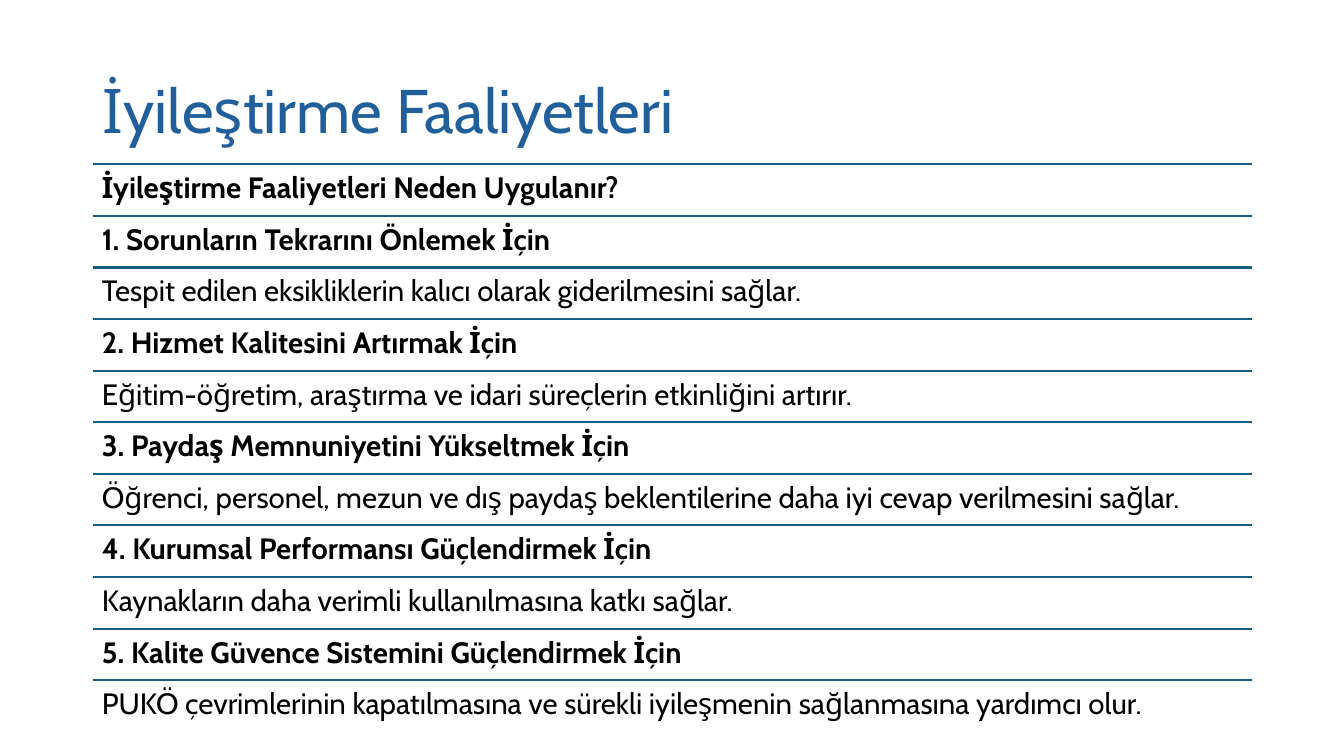
from lxml import etree
from pptx import Presentation
from pptx.dml.color import RGBColor
from pptx.enum.shapes import MSO_CONNECTOR
from pptx.enum.text import MSO_ANCHOR, MSO_AUTO_SIZE, PP_ALIGN
from pptx.oxml.ns import qn
from pptx.util import Inches, Pt

STRAIGHT = MSO_CONNECTOR.STRAIGHT
TOP, MIDDLE = MSO_ANCHOR.TOP, MSO_ANCHOR.MIDDLE
LEFT = PP_ALIGN.LEFT
NO_AUTOFIT = MSO_AUTO_SIZE.NONE

BLUE = RGBColor(0x21, 0x5F, 0x9A)
TEAL = RGBColor(0x15, 0x60, 0x82)
BLACK = RGBColor(0, 0, 0)
FONT = "Cabin"

LIST_LEFT, LIST_TOP = 0.92, 1.63
LIST_WIDTH, LIST_HEIGHT = 11.5, 5.63

HEADING = "İyileştirme Faaliyetleri Neden Uygulanır?"
REASONS = [
    ("Sorunların Tekrarını Önlemek İçin",
     "Tespit edilen eksikliklerin kalıcı olarak giderilmesini sağlar."),
    ("Hizmet Kalitesini Artırmak İçin",
     "Eğitim-öğretim, araştırma ve idari süreçlerin etkinliğini artırır."),
    ("Paydaş Memnuniyetini Yükseltmek İçin",
     "Öğrenci, personel, mezun ve dış paydaş beklentilerine daha iyi cevap "
     "verilmesini sağlar."),
    ("Kurumsal Performansı Güçlendirmek İçin",
     "Kaynakların daha verimli kullanılmasına katkı sağlar."),
    ("Kalite Güvence Sistemini Güçlendirmek İçin",
     "PUKÖ çevrimlerinin kapatılmasına ve sürekli iyileşmenin sağlanmasına "
     "yardımcı olur."),
]


def write_text(tf, text, size, color, anchor, bold=False):
    tf.word_wrap = True
    tf.auto_size = NO_AUTOFIT
    tf.vertical_anchor = anchor
    p = tf.paragraphs[0]
    p.alignment = LEFT
    p.line_spacing = 0.9
    r = p.add_run()
    r.text = text
    r.font.name = FONT
    r.font.size = Pt(size)
    r.font.bold = bold
    r.font.color.rgb = color


def set_title(s, text):
    title = s.shapes.title
    title.left, title.top = Inches(0.92), Inches(0.4)
    title.width, title.height = Inches(11.5), Inches(1.45)
    write_text(title.text_frame, text, 44, BLUE, MIDDLE)


def add_rule(shapes, top):
    right = LIST_LEFT + LIST_WIDTH
    line = shapes.add_connector(STRAIGHT, Inches(LIST_LEFT), Inches(top),
                                Inches(right), Inches(top))
    line.line.color.rgb = TEAL
    line.line.width = Pt(1.5)
    etree.SubElement(line._element.spPr, qn("a:effectLst"))


def add_row(shapes, top, height, text, bold):
    """Add one list row: a rule with its text below."""
    add_rule(shapes, top)
    box = shapes.add_textbox(Inches(LIST_LEFT), Inches(top),
                             Inches(LIST_WIDTH), Inches(height))
    tf = box.text_frame
    tf.margin_left = tf.margin_right = Inches(0.09)
    tf.margin_top = tf.margin_bottom = Inches(0.09)
    write_text(tf, text, 21, BLACK, TOP, bold)


def add_reason_list(s):
    rows = [(HEADING, True)]
    for number, (reason, effect) in enumerate(REASONS, 1):
        rows += [(f"{number}. {reason}", True), (effect, False)]
    height = LIST_HEIGHT / len(rows)
    group = s.shapes.add_group_shape()
    for i, (text, bold) in enumerate(rows):
        add_row(group.shapes, LIST_TOP + i * height, height, text, bold)


def main():
    prs = Presentation()
    prs.slide_width, prs.slide_height = Inches(13.33), Inches(7.5)
    s = prs.slides.add_slide(prs.slide_layouts[5])
    set_title(s, "İyileştirme Faaliyetleri")
    add_reason_list(s)
    prs.save("out.pptx")


if __name__ == "__main__":
    main()
